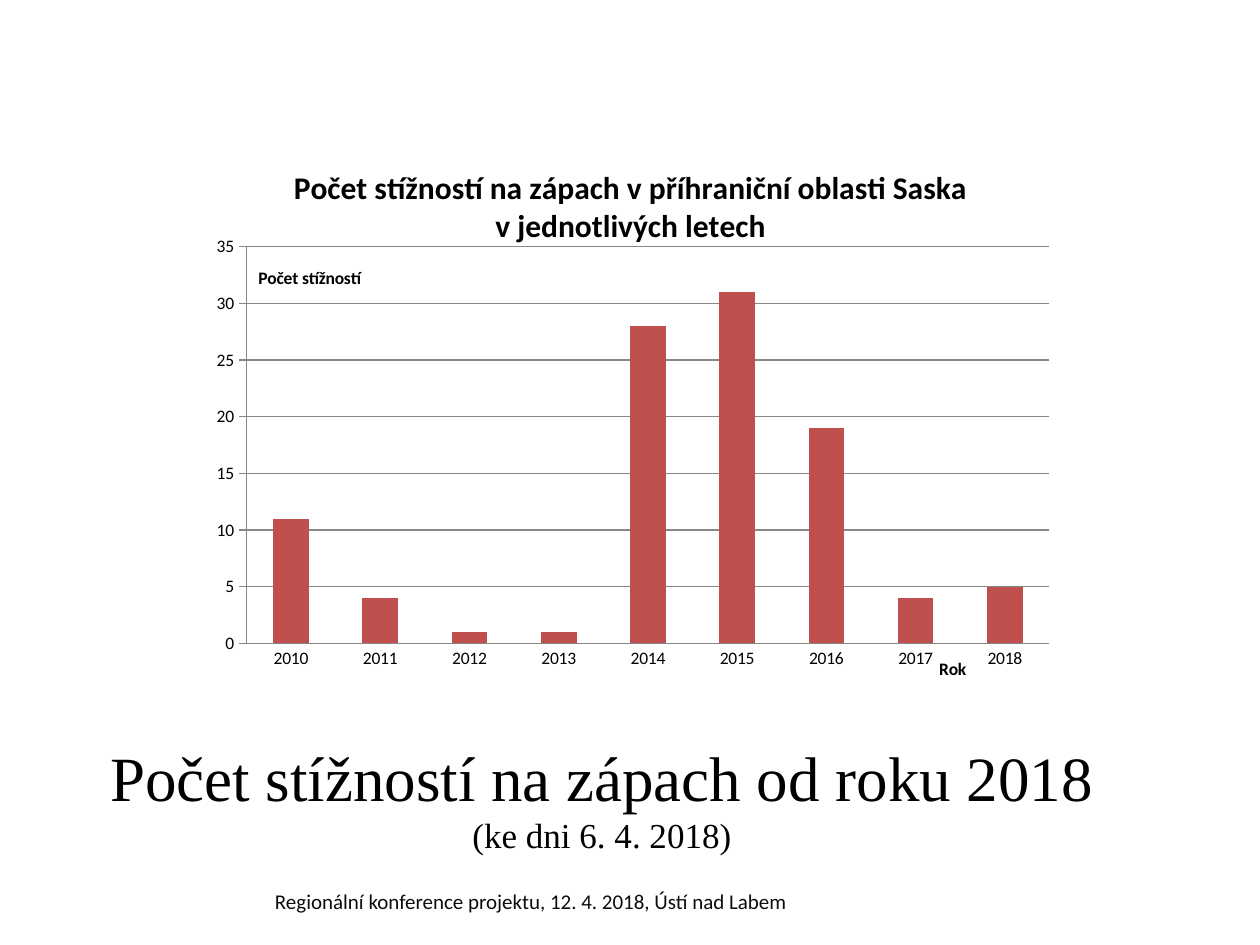
from lxml.etree import SubElement
from pptx import Presentation
from pptx.chart.data import CategoryChartData
from pptx.dml.color import RGBColor
from pptx.enum.chart import XL_CHART_TYPE as ChartType, XL_TICK_MARK as Tick
from pptx.enum.text import MSO_ANCHOR as Anchor, PP_ALIGN as Align
from pptx.oxml.ns import qn
from pptx.util import Emu, Pt

PX = 914400 / 126
BLACK, GRAY, RED, DARK = "000000", "878787", "C0504D", "0D0D0D"
HEADING = ("Počet stížností na zápach v příhraniční oblasti Saska", "v jednotlivých letech")
COMPLAINTS = {2010: 11, 2011: 4, 2012: 1, 2013: 1, 2014: 28,
              2015: 31, 2016: 19, 2017: 4, 2018: 5}


def px(*lengths):
    return [Emu(round(length * PX)) for length in lengths]


def color(hex_value):
    return RGBColor.from_string(hex_value)


def style_font(font, name, size, hex_value, bold=False):
    for key, value in {"name": name, "size": Pt(size), "bold": bold}.items():
        setattr(font, key, value)
    font.color.rgb = color(hex_value)


def style_frame(frame):
    settings = {"word_wrap": True, "vertical_anchor": Anchor.MIDDLE}
    for key, value in settings.items():
        setattr(frame, key, value)
    frame.paragraphs[0].alignment = Align.CENTER
    return frame.paragraphs[0]


def add_title(slide, box):
    title = slide.shapes.title
    for key, value in zip(("left", "top", "width", "height"), px(*box)):
        setattr(title, key, value)
    paragraph = style_frame(title.text_frame)
    headline = paragraph.add_run()
    headline.text = "Počet stížností na zápach od roku 2018"
    paragraph.add_line_break()
    date = paragraph.add_run()
    date.text = "(ke dni 6. 4. 2018)"
    for run, size in ((headline, 36), (date, 20)):
        style_font(run.font, "Times New Roman", size, BLACK)


def add_footer(slide, box):
    footer = slide.shapes.add_textbox(*px(*box))
    paragraph = style_frame(footer.text_frame)
    run = paragraph.add_run()
    run.text = "Regionální konference projektu, 12. 4. 2018, Ústí nad Labem"
    style_font(run.font, "Calibri", 12, DARK)


def place(element, index, **position):
    layout = element.find(qn("c:layout"))
    if layout is not None:
        element.remove(layout)
    layout = element.makeelement(qn("c:layout"))
    element.insert(index, layout)
    manual = SubElement(layout, qn("c:manualLayout"))
    if "w" in position:
        SubElement(manual, qn("c:layoutTarget")).set("val", "inner")
    for side in ("x", "y"):
        SubElement(manual, qn(f"c:{side}Mode")).set("val", "edge")
    for key, value in position.items():
        SubElement(manual, qn(f"c:{key}")).set("val", str(value))


def write_chart_title(title, lines, size, x, y):
    frame = title.text_frame
    frame.text = "\n".join(lines)
    for paragraph in frame.paragraphs:
        style_font(paragraph.runs[0].font, "Calibri", size, BLACK, True)
    body = title._element.find(".//" + qn("a:bodyPr"))
    body.set("rot", "0")
    body.set("vert", "horz")
    place(title._element, 1, x=x, y=y)


def style_line(line):
    line.color.rgb = color(GRAY)
    line.width = Pt(0.75)


def add_complaints_chart(slide, box):
    data = CategoryChartData()
    data.categories = [str(year) for year in COMPLAINTS]
    data.add_series(" ".join(HEADING), COMPLAINTS.values())
    chart = slide.shapes.add_chart(ChartType.COLUMN_CLUSTERED, *px(*box), data).chart
    style_font(chart.font, "Calibri", 10, BLACK)
    chart.has_legend = False

    plot = chart.plots[0]
    plot.gap_width = 150
    plot.vary_by_categories = False
    fill = plot.series[0].format.fill
    fill.solid()
    fill.fore_color.rgb = color(RED)

    years, counts = chart.category_axis, chart.value_axis
    for axis, mark in ((years, Tick.NONE), (counts, Tick.OUTSIDE)):
        axis.major_tick_mark = mark
        axis.minor_tick_mark = Tick.NONE
        style_line(axis.format.line)
    scale = {"minimum_scale": 0, "maximum_scale": 35, "major_unit": 5,
             "has_major_gridlines": True}
    for key, value in scale.items():
        setattr(counts, key, value)
    style_line(counts.major_gridlines.format.line)

    chart.has_title = True
    write_chart_title(chart.chart_title, HEADING, 18, 0.11, 0.05)
    write_chart_title(years.axis_title, ["Rok"], 10, 0.85, 0.93)
    write_chart_title(counts.axis_title, ["Počet stížností"], 10, 0.07, 0.23)
    place(chart._chartSpace.chart.plotArea, 0, x=0.06, y=0.2, w=0.92, h=0.71)


def main():
    deck = Presentation()
    deck.slide_width, deck.slide_height = px(1260, 945)
    slide = deck.slides.add_slide(deck.slide_layouts[5])
    add_title(slide, (35, 718, 1134, 158))
    add_footer(slide, (233, 876, 596, 50))
    add_complaints_chart(slide, (194, 135, 873, 559))
    deck.save("out.pptx")


if __name__ == "__main__":
    main()
